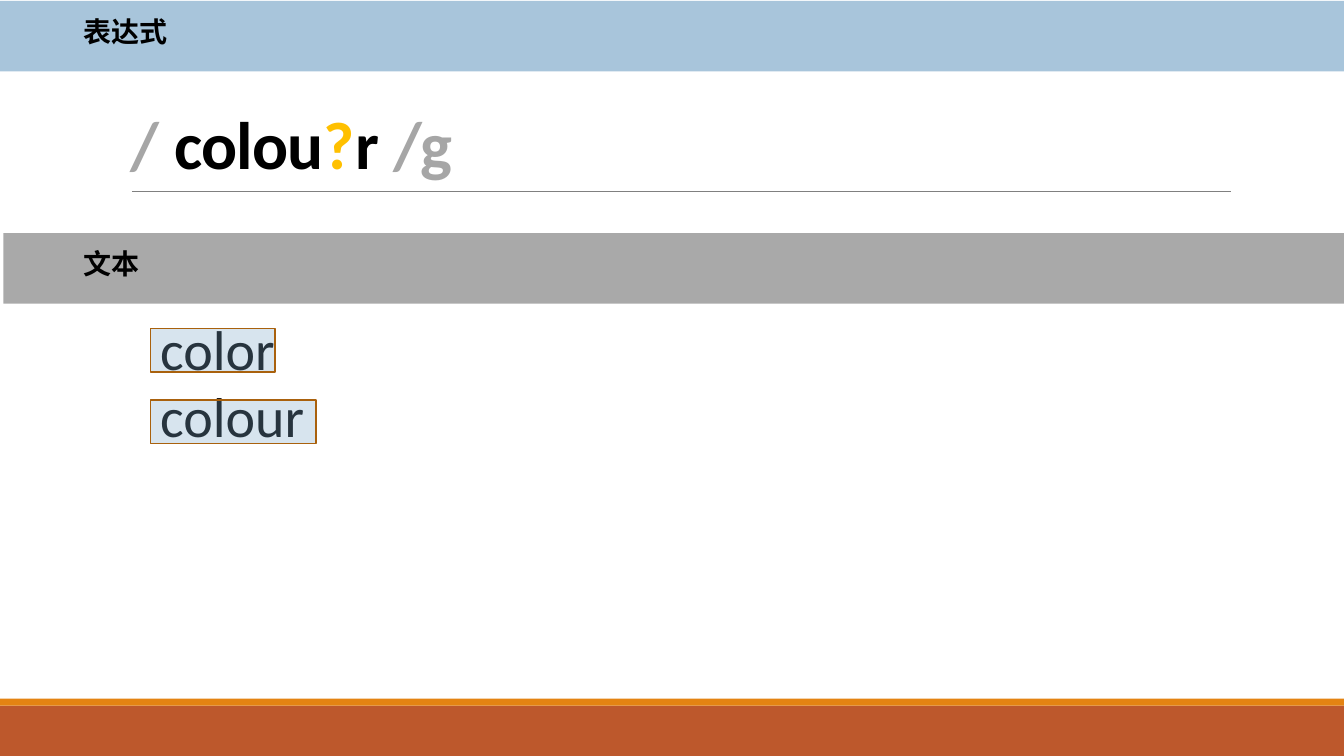
from lxml.etree import SubElement
from pptx import Presentation
from pptx.dml.color import RGBColor
from pptx.enum.shapes import MSO_CONNECTOR, MSO_SHAPE
from pptx.enum.text import MSO_ANCHOR
from pptx.oxml.ns import qn
from pptx.util import Pt

WIDTH, HEIGHT = 960, 540
BLUE, GRAY, BLACK = "7EA9CA", "808080", "000000"
SLASH_GRAY, GOLD = "A6A6A6", "FFC000"
ORANGE, RUST, BROWN = "E48312", "BD582C", "A9610D"


def rgb(color):
    return RGBColor.from_string(color)


class SlideBuilder:
    latin, cjk = "Calibri", "Noto Sans CJK SC"

    def __init__(self, slide):
        self.s = slide

    def rect(self, x, y, w, h, fill, opacity=100, line=None):
        """Draw a rectangle; opacity is a percentage."""
        sp = self.s.shapes.add_shape(MSO_SHAPE.RECTANGLE, Pt(x), Pt(y), Pt(w), Pt(h))
        sp.shadow.inherit = False
        sp.fill.solid()
        sp.fill.fore_color.rgb = rgb(fill)
        if opacity < 100:
            clr = sp.fill._xPr.find(".//" + qn("a:srgbClr"))
            SubElement(clr, qn("a:alpha"), val=str(opacity * 1000))
        if line:
            sp.line.color.rgb = rgb(line)
            sp.line.width = Pt(1.25)
        else:
            sp.line.fill.background()

    def rule(self, x1, x2, y, color):
        """Draw a thin horizontal line."""
        cxn = self.s.shapes.add_connector(MSO_CONNECTOR.STRAIGHT, Pt(x1), Pt(y), Pt(x2), Pt(y))
        cxn.line.color.rgb = rgb(color)
        cxn.line.width = Pt(0.5)
        SubElement(cxn._element.spPr, qn("a:effectLst"))

    def text(self, x, y, w, h, paragraphs, size, font=latin, bold=False,
             wrap=True, anchor=MSO_ANCHOR.TOP, line_spacing=None, tracking=None):
        """Add a text box; each paragraph is a list of (text, color) runs."""
        tf = self.s.shapes.add_textbox(Pt(x), Pt(y), Pt(w), Pt(h)).text_frame
        tf.word_wrap = wrap
        tf.vertical_anchor = anchor
        for i, runs in enumerate(paragraphs):
            p = tf.add_paragraph() if i else tf.paragraphs[0]
            if line_spacing:
                p.line_spacing = line_spacing
            for text, color in runs:
                r = p.add_run()
                r.text = text
                r.font.size = Pt(size)
                r.font.bold = bold
                r.font.name = font
                r.font.color.rgb = rgb(color)
                rPr = r._r.get_or_add_rPr()
                SubElement(rPr, qn("a:ea"), typeface=font)
                if tracking:
                    rPr.set("spc", str(int(tracking * 100)))

    def heading(self, x, y, w, title, fill):
        """Draw a full-width translucent band with its label."""
        self.rect(x, y, WIDTH, 50.4, fill, opacity=67)
        self.text(52.6, y + 6, w, 31.7, [[(title, BLACK)]], 20,
                  font=self.cjk, bold=True, wrap=False)


def main():
    prs = Presentation()
    prs.slide_width, prs.slide_height = Pt(WIDTH), Pt(HEIGHT)
    b = SlideBuilder(prs.slides.add_slide(prs.slide_layouts[6]))

    b.rect(0, 504, WIDTH, 36, RUST)
    b.rect(0, 499, WIDTH, 5, ORANGE)
    b.rule(94.3, 879, 136.5, GRAY)

    b.heading(2.4, 166.5, 54.7, "文本", GRAY)
    b.text(107.3, 221, 275, 104.4, [[("color", BLACK)], [("colour", BLACK)]], 40)

    b.heading(0, 0.6, 75.6, "表达式", BLUE)
    expression = [("/ ", SLASH_GRAY), ("colou", BLACK), ("?", GOLD),
                  ("r ", BLACK), ("/g", SLASH_GRAY)]
    b.text(86.4, 20.2, 483.8, 114.5, [expression], 48, bold=True,
           anchor=MSO_ANCHOR.BOTTOM, line_spacing=0.85, tracking=-0.5)

    for i, match_width in enumerate((89, 118)):
        b.rect(107.5, 234.7 + 51.2 * i, match_width, 31, BLUE, opacity=31, line=BROWN)

    prs.save("out.pptx")


if __name__ == "__main__":
    main()
